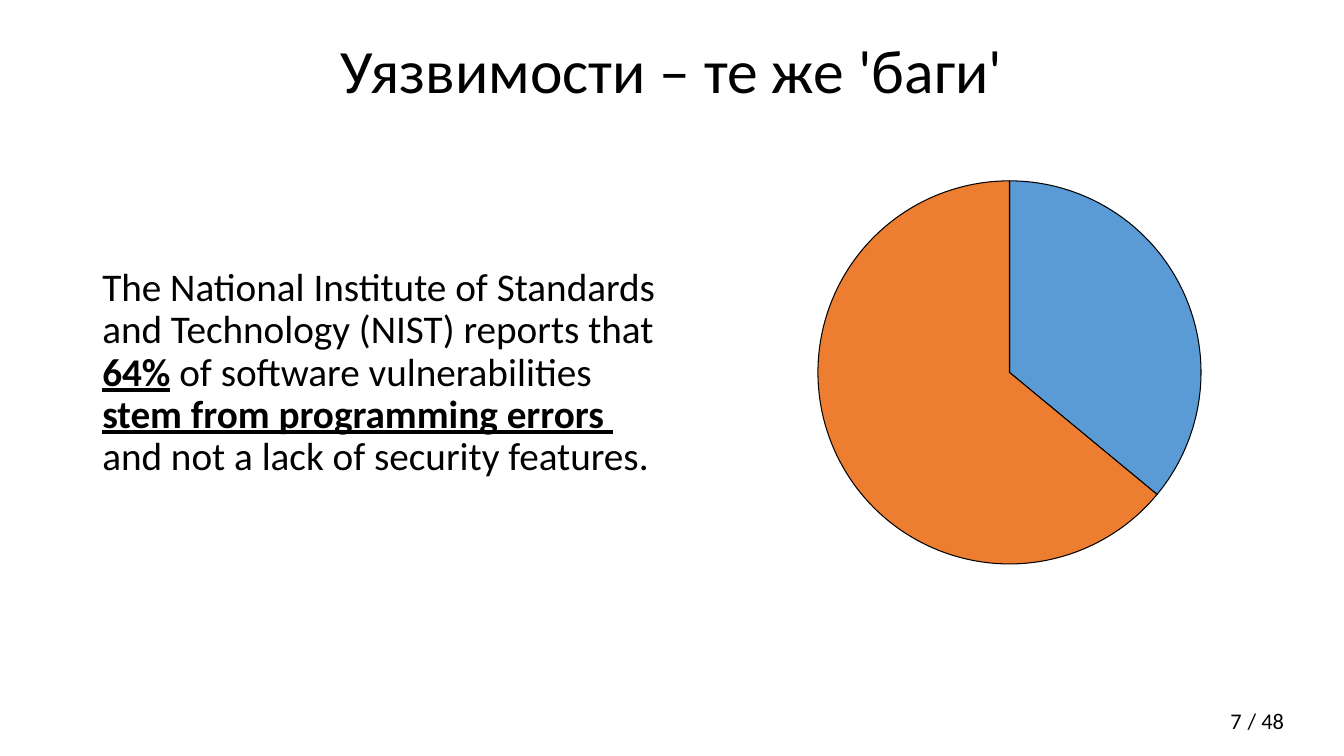
from pptx import Presentation
from pptx.chart.data import CategoryChartData
from pptx.dml.color import RGBColor
from pptx.enum.chart import XL_CHART_TYPE
from pptx.enum.text import MSO_ANCHOR, PP_ALIGN
from pptx.oxml import parse_xml
from pptx.oxml.ns import nsdecls
from pptx.util import Pt

# Content
TITLE = "Уязвимости – те же 'баги'"
REPORT_LINES = [  # each line holds (text, emphasised) runs
    [("The National Institute of Standards ", False)],
    [("and Technology (NIST) reports that ", False)],
    [("64%", True), (" of software vulnerabilities ", False)],
    [("stem from programming errors ", True)],
    [("and not a lack of security features.", False)],
]
PAGE_NUMBER = "7"
PAGE_TOTAL = "/ 48"
SHARES = {"1": 36, "2": 64}

# Style
FONT = "Calibri"
BLACK = RGBColor(0x00, 0x00, 0x00)
BLUE = RGBColor(0x5B, 0x9B, 0xD5)
ORANGE = RGBColor(0xED, 0x7D, 0x31)

# Places in points: left, top, width, height
TITLE_AREA = (66, 0, 828, 104.4)
REPORT_AREA = (66, 187.5, 440, 162)
NUMBER_AREA = (678, 500.4, 216, 28.8)
TOTAL_AREA = (884.16, 501.84, 41, 26.6)
CHART_AREA = (500.4, 118.8, 441.4, 294.5)
PIE_DIAMETER = 274.3

deck = Presentation()
deck.slide_width, deck.slide_height = Pt(960), Pt(540)
page = deck.slides.add_slide(deck.slide_layouts[6])


def add_text(area, lines, size, align=PP_ALIGN.LEFT, anchor=MSO_ANCHOR.TOP,
             spacing=None, wrap=True):
    box = page.shapes.add_textbox(*map(Pt, area))
    frame = box.text_frame
    frame.word_wrap = wrap
    frame.vertical_anchor = anchor
    para = frame.paragraphs[0]
    para.alignment = align
    para.line_spacing = spacing
    para.font.size = Pt(size)
    for index, line in enumerate(lines):
        if index:
            para.add_line_break()
        for text, emphasised in line:
            span = para.add_run()
            span.text = text
            font = span.font
            font.name, font.size = FONT, Pt(size)
            font.bold = font.underline = emphasised
            font.color.rgb = BLACK


# Text
add_text(TITLE_AREA, [[(TITLE, False)]], 44, PP_ALIGN.CENTER, MSO_ANCHOR.MIDDLE, 0.9)
add_text(REPORT_AREA, REPORT_LINES, 28, spacing=0.9)
add_text(NUMBER_AREA, [[(PAGE_NUMBER, False)]], 16, PP_ALIGN.RIGHT, MSO_ANCHOR.MIDDLE)
add_text(TOTAL_AREA, [[(PAGE_TOTAL, False)]], 16, wrap=False)

# Pie chart
data = CategoryChartData()
data.categories = list(SHARES)
data.add_series("Series 1", list(SHARES.values()))
chart = page.shapes.add_chart(XL_CHART_TYPE.PIE, *map(Pt, CHART_AREA), data).chart
chart.has_legend = False
chart.has_title = False
chart.font.name, chart.font.size = FONT, Pt(10)
chart.font.color.rgb = BLACK
pie = chart.plots[0]
pie.vary_by_categories = True
for index, color in enumerate((BLUE, ORANGE)):
    slice_format = pie.series[0].points[index].format
    slice_format.fill.solid()
    slice_format.fill.fore_color.rgb = color
    slice_format.line.color.rgb = BLACK
    slice_format.line.width = Pt(0.75)

# Centre the pie in its frame
width, height = (round(PIE_DIAMETER / side, 2) for side in CHART_AREA[2:])
plot_area = chart.element.chart.plotArea
for layout in plot_area.findall("{*}layout"):
    plot_area.remove(layout)
plot_area.insert(0, parse_xml(
    f'<c:layout {nsdecls("c")}><c:manualLayout><c:layoutTarget val="inner"/>'
    '<c:xMode val="edge"/><c:yMode val="edge"/>'
    f'<c:x val="{(1 - width) / 2:.3f}"/><c:y val="{(1 - height) / 2:.3f}"/>'
    f'<c:w val="{width}"/><c:h val="{height}"/></c:manualLayout></c:layout>'))

deck.save("out.pptx")
